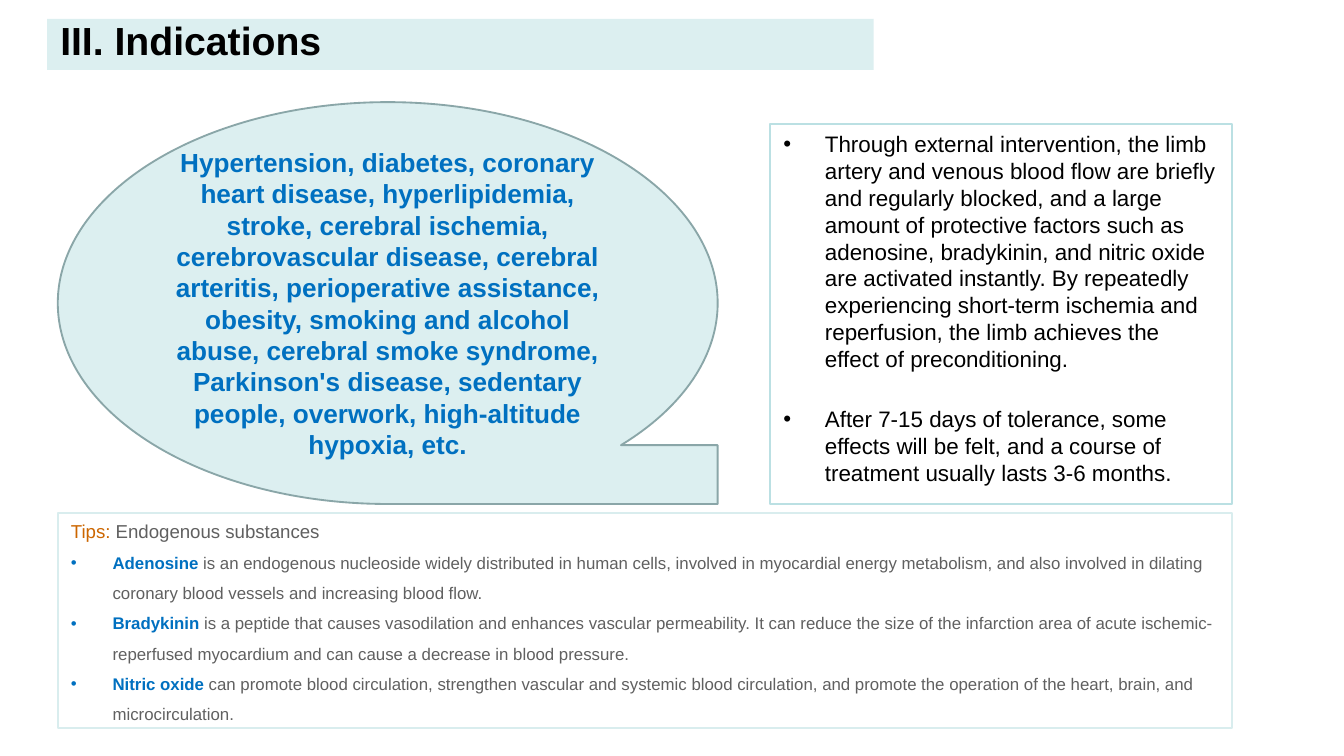
from pptx import Presentation
from pptx.dml.color import RGBColor as RGB
from pptx.enum.shapes import MSO_SHAPE as Kind
from pptx.enum.text import MSO_ANCHOR as Anchor, PP_ALIGN as Align
from pptx.oxml.ns import qn
from pptx.util import Inches, Pt
from lxml import etree

TEAL = RGB(0xBB, 0xE0, 0xE3)
PALE = RGB(0xD9, 0xED, 0xEE)
EDGE = RGB(0x8A, 0xA6, 0xA8)
BLUE = RGB(0x00, 0x70, 0xC0)
RUST = RGB(0xCC, 0x66, 0x00)
GREY = RGB(0x60, 0x60, 0x60)
BLACK = RGB(0, 0, 0)
WHITE = RGB(0xFF, 0xFF, 0xFF)

WIDTH = Inches(10)
INDENT = Inches(0.31)


def add_text(para, text, size=12, color=BLACK, bold=False):
    run = para.add_run()
    run.text = text
    font = run.font
    font.name, font.size, font.bold = "Arial", Pt(size), bold
    font.color.rgb = color


class Page:
    """Holds the slide and its style."""

    def __init__(self, slide):
        self.slide = slide

    def shape(self, kind, box, fill=None, alpha=100, line=None,
              anchor=Anchor.TOP):
        item = self.slide.shapes.add_shape(kind, *map(Inches, box))
        item.shadow.inherit = False
        if fill is None:
            item.fill.background()
        else:
            item.fill.solid()
            item.fill.fore_color.rgb = fill
            if alpha < 100:
                color = item.fill._xPr.find(".//" + qn("a:srgbClr"))
                etree.SubElement(color, qn("a:alpha"), val=str(alpha * 1000))
        if line is None:
            item.line.fill.background()
        else:
            item.line.color.rgb = line
            item.line.width = Pt(1)
        frame = item.text_frame
        frame.word_wrap = True
        frame.vertical_anchor = anchor
        return frame

    def para(self, frame, first=False, align=Align.LEFT, bullet=False,
             before=0, lines=None):
        para = frame.paragraphs[0] if first else frame.add_paragraph()
        para.alignment = align
        para.space_before = Pt(before)
        if lines:
            para.line_spacing = lines
        if bullet:
            props = para._p.get_or_add_pPr()
            props.set("marL", str(INDENT))
            props.set("indent", str(-INDENT))
            etree.SubElement(props, qn("a:buFont"), typeface="Arial")
            etree.SubElement(props, qn("a:buChar"), char="•")
        return para


# Widescreen, 16 to 9
deck = Presentation()
deck.slide_width, deck.slide_height = WIDTH, WIDTH * 9 // 16
page = Page(deck.slides.add_slide(deck.slide_layouts[6]))

# Title bar
frame = page.shape(Kind.RECTANGLE, (0.35, 0.14, 6.15, 0.38), TEAL, 51,
                   anchor=Anchor.BOTTOM)
add_text(page.para(frame, first=True), "III. Indications", size=21, bold=True)

# How it works
frame = page.shape(Kind.RECTANGLE, (5.73, 0.92, 3.44, 2.83), line=TEAL)
points = [
    ("Through external intervention, the limb artery and venous blood flow "
     "are briefly and regularly blocked, and a large amount of protective "
     "factors such as adenosine, bradykinin, and nitric oxide are activated "
     "instantly. By repeatedly experiencing short-term ischemia and "
     "reperfusion, the limb achieves the effect of preconditioning.", 1.8),
    ("After 7-15 days of tolerance, some effects will be felt, and a course "
     "of treatment usually lasts 3-6 months.", 17.7),
]
for i, (text, gap) in enumerate(points):
    add_text(page.para(frame, first=i == 0, bullet=True, before=gap), text)

# Tips
frame = page.shape(Kind.RECTANGLE, (0.43, 3.82, 8.74, 1.6), WHITE, line=PALE)
head = page.para(frame, first=True)
add_text(head, "Tips: ", size=10, color=RUST)
add_text(head, "Endogenous substances", size=10, color=GREY)
tips = [
    ("Adenosine",
     " is an endogenous nucleoside widely distributed in human cells, "
     "involved in myocardial energy metabolism, and also involved in "
     "dilating coronary blood vessels and increasing blood flow."),
    ("Bradykinin",
     " is a peptide that causes vasodilation and enhances vascular "
     "permeability. It can reduce the size of the infarction area of acute "
     "ischemic-reperfused myocardium and can cause a decrease in blood "
     "pressure."),
    ("Nitric oxide",
     " can promote blood circulation, strengthen vascular and systemic blood "
     "circulation, and promote the operation of the heart, brain, and "
     "microcirculation."),
]
for name, text in tips:
    para = page.para(frame, bullet=True, lines=1.5)
    add_text(para, name, size=9, color=BLUE, bold=True)
    add_text(para, text, size=9, color=GREY)

# Conditions
frame = page.shape(Kind.FLOWCHART_SEQUENTIAL_ACCESS_STORAGE,
                   (0.43, 0.76, 4.91, 2.99), TEAL, 50, EDGE, Anchor.MIDDLE)
add_text(page.para(frame, first=True, align=Align.CENTER),
         "Hypertension, diabetes, coronary heart disease, hyperlipidemia, "
         "stroke, cerebral ischemia, cerebrovascular disease, cerebral "
         "arteritis, perioperative assistance, obesity, smoking and alcohol "
         "abuse, cerebral smoke syndrome, Parkinson's disease, sedentary "
         "people, overwork, high-altitude hypoxia, etc.",
         size=14, color=BLUE, bold=True)

deck.save("out.pptx")
